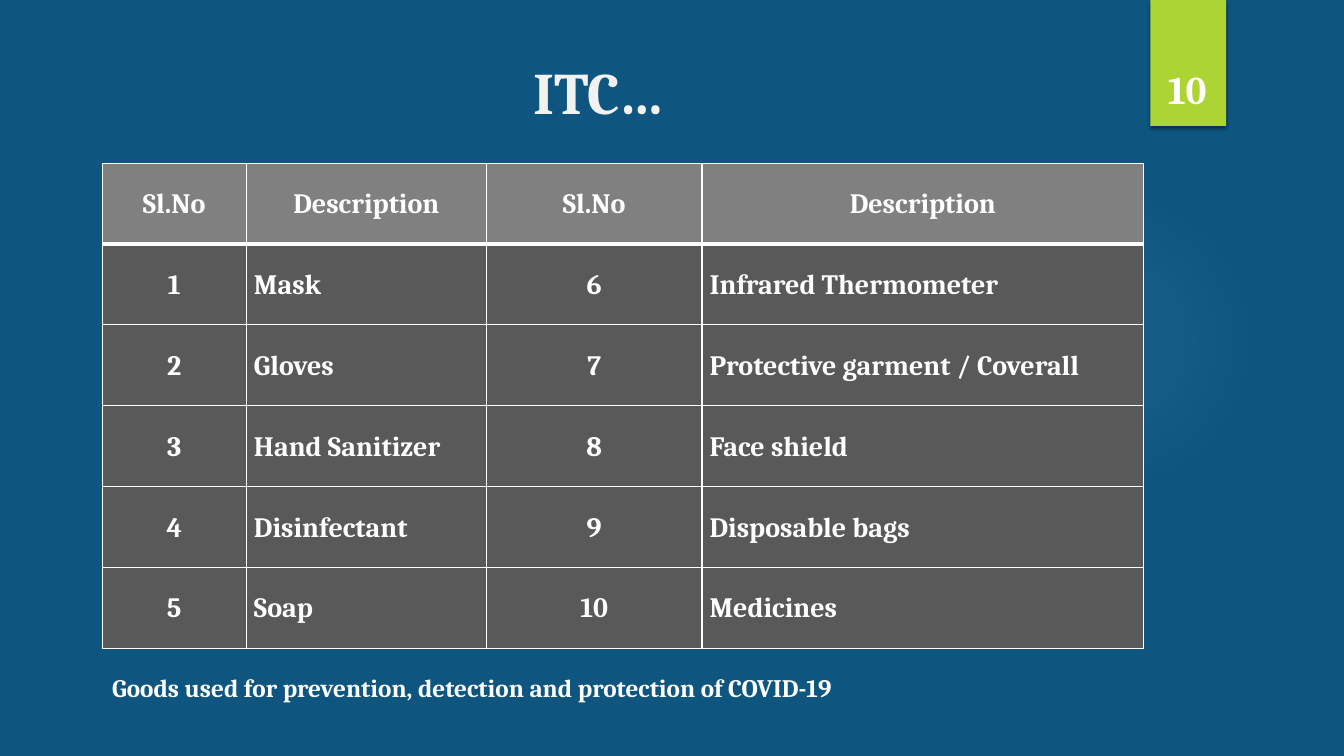
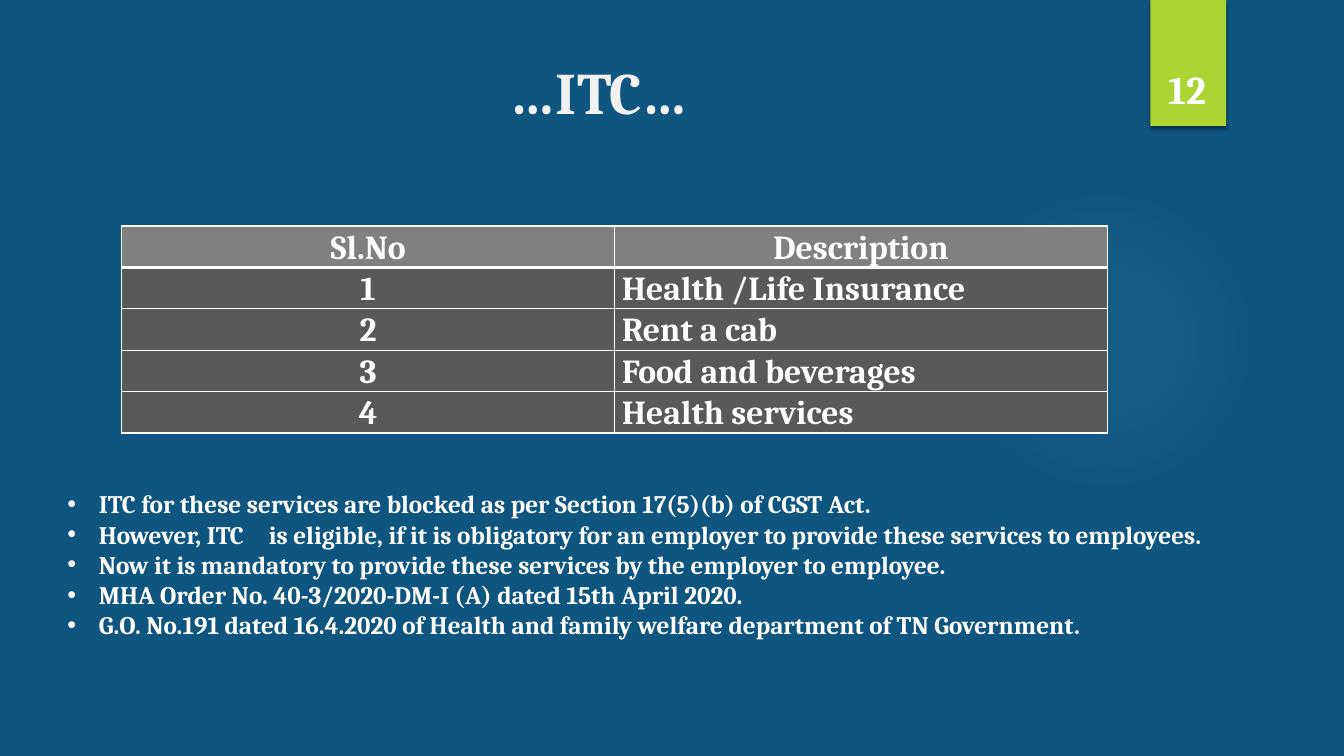
"""Build two input tax credit slides, each with a table and notes."""
from pptx import Presentation
from pptx.dml.color import RGBColor
from pptx.enum.shapes import MSO_SHAPE
from pptx.enum.text import MSO_ANCHOR, MSO_AUTO_SIZE, PP_ALIGN
from pptx.oxml import parse_xml
from pptx.oxml.ns import nsdecls, qn
from pptx.util import Pt

OVAL, RECTANGLE = MSO_SHAPE.OVAL, MSO_SHAPE.RECTANGLE
TOP, MIDDLE, BOTTOM = MSO_ANCHOR.TOP, MSO_ANCHOR.MIDDLE, MSO_ANCHOR.BOTTOM
LEFT, CENTER, JUSTIFY = PP_ALIGN.LEFT, PP_ALIGN.CENTER, PP_ALIGN.JUSTIFY

BLUE = RGBColor(0x0E, 0x55, 0x80)
SKY = RGBColor(0x7A, 0xC4, 0xF0)
LIME = RGBColor(0xAC, 0xD4, 0x33)
WHITE = RGBColor(0xFF, 0xFF, 0xFF)
PALE = RGBColor(0xF2, 0xF2, 0xF2)
HEADER_GREY = RGBColor(0x80, 0x80, 0x80)
BODY_GREY = RGBColor(0x59, 0x59, 0x59)

FONT = {"name": "Cambria", "bold": True}
CELL = {"margin_left": Pt(5.4), "margin_right": Pt(5.4), "margin_top": 0,
        "margin_bottom": 0, "vertical_anchor": MIDDLE}
GLOW_STOPS = [(0, 7), (36, 6), (69, 0)]

SLIDES = [
    {
        "title": "ITC…",
        "number": "10",
        "table_at": (73, 116.5),
        "columns": [103, 171.5, 154, 315.5],
        "row_height": 57.75,
        "size": 20,
        "rows": [
            ["Sl.No", "Description", "Sl.No", "Description"],
            ["1", "Mask", "6", "Infrared Thermometer"],
            ["2", "Gloves", "7", "Protective garment / Coverall"],
            ["3", "Hand Sanitizer", "8", "Face shield"],
            ["4", "Disinfectant", "9", "Disposable bags"],
            ["5", "Soap", "10", "Medicines"],
        ],
        "notes_at": (73, 476.5, 749, 29),
        "bulleted": False,
        "notes": ["Goods used for prevention, detection and protection of COVID-19"],
    },
    {
        "title": "…ITC…",
        "number": "12",
        "table_at": (87, 161.5),
        "columns": [352, 352],
        "row_height": 29.5,
        "size": 24,
        "rows": [
            ["Sl.No", "Description"],
            ["1", "Health /Life Insurance"],
            ["2", "Rent a cab"],
            ["3", "Food and beverages"],
            ["4", "Health services"],
        ],
        "notes_at": (41, 345.5, 850, 117),
        "bulleted": True,
        "notes": [
            "ITC for these services are blocked as per Section 17(5)(b) of CGST Act.",
            "However, ITC \tis eligible, if it is obligatory for an employer to provide these services to employees.",
            "Now it is mandatory to provide these services by the employer to employee.",
            "MHA Order No. 40-3/2020-DM-I (A) dated 15th April 2020.",
            "G.O. No.191 dated 16.4.2020 of Health and family welfare department of TN Government.",
        ],
    },
]


def write(frame, lines, size, align, color=WHITE, spacing=None, bulleted=False):
    for index, line in enumerate(lines):
        para = frame.add_paragraph() if index else frame.paragraphs[0]
        para.alignment = align
        if spacing:
            para.line_spacing = spacing
        if bulleted:
            properties = para._p.get_or_add_pPr()
            properties.set("marL", str(Pt(22.5)))
            properties.set("indent", str(-Pt(22.5)))
            properties.append(parse_xml(f'<a:buFont {nsdecls("a")} typeface="Arial"/>'))
            properties.append(parse_xml(f'<a:buChar {nsdecls("a")} char="•"/>'))
        span = para.add_run()
        span.text = line
        for name, value in FONT.items():
            setattr(span.font, name, value)
        span.font.size = Pt(size)
        span.font.color.rgb = color


def place_text(page, at, anchor, lines, size, align, bulleted=False):
    box = page.shapes.add_textbox(*map(Pt, at))
    box.text_frame.word_wrap = True
    box.text_frame.vertical_anchor = anchor
    write(box.text_frame, lines, size, align, bulleted=bulleted)


deck = Presentation()
deck.slide_width, deck.slide_height = Pt(960), Pt(540)
background = deck.slide_master.background.fill
background.solid()
background.fore_color.rgb = BLUE

for content in SLIDES:
    page = deck.slides.add_slide(deck.slide_layouts[5])

    glow = page.shapes.add_shape(OVAL, Pt(677.5), Pt(132), Pt(222), Pt(222))
    glow.shadow.inherit = False
    glow.line.fill.background()
    glow.fill.background()
    stops = "".join(
        f'<a:gs pos="{position * 1000}"><a:srgbClr val="{SKY}">'
        f'<a:alpha val="{opacity * 1000}"/></a:srgbClr></a:gs>'
        for position, opacity in GLOW_STOPS)
    properties = glow._element.spPr
    properties.replace(properties.find(qn("a:noFill")), parse_xml(
        f'<a:gradFill {nsdecls("a")}><a:gsLst>{stops}</a:gsLst><a:path path="circle">'
        '<a:fillToRect l="50000" t="50000" r="50000" b="50000"/></a:path></a:gradFill>'))

    ribbon = page.shapes.add_shape(RECTANGLE, Pt(821.75), 0, Pt(54), Pt(90))
    ribbon.fill.solid()
    ribbon.fill.fore_color.rgb = LIME
    ribbon.line.fill.background()
    ribbon.shadow.inherit = False
    ribbon._element.spPr.find(qn("a:effectLst")).append(parse_xml(
        f'<a:outerShdw {nsdecls("a")} blurRad="{Pt(3)}" dist="{Pt(2)}" dir="5400000" '
        'rotWithShape="0"><a:srgbClr val="000000"><a:alpha val="45000"/></a:srgbClr></a:outerShdw>'))

    title = page.shapes.title
    title.left, title.top, title.width, title.height = map(Pt, (34, 36, 788, 110))
    title.text_frame.auto_size = MSO_AUTO_SIZE.NONE
    title.text_frame.vertical_anchor = TOP
    write(title.text_frame, [content["title"]], 42, CENTER, PALE)

    rows, columns = content["rows"], content["columns"]
    left, top = content["table_at"]
    table = page.shapes.add_table(
        len(rows), len(columns), Pt(left), Pt(top),
        Pt(sum(columns)), Pt(content["row_height"] * len(rows))).table
    table.horz_banding = False
    for column, width in zip(table.columns, columns):
        column.width = Pt(width)
    for row_index, row in enumerate(rows):
        table.rows[row_index].height = Pt(content["row_height"])
        edges = {"L": 1, "R": 1, "T": 3 if row_index == 1 else 1, "B": 1 if row_index else 3}
        for column_index, words in enumerate(row):
            cell = table.cell(row_index, column_index)
            for name, value in CELL.items():
                setattr(cell, name, value)
            for side, weight in edges.items():
                cell._tc.get_or_add_tcPr().append(parse_xml(
                    f'<a:ln{side} {nsdecls("a")} w="{Pt(weight)}"><a:solidFill>'
                    f'<a:srgbClr val="{WHITE}"/></a:solidFill></a:ln{side}>'))
            cell.fill.solid()
            cell.fill.fore_color.rgb = BODY_GREY if row_index else HEADER_GREY
            align = JUSTIFY if row_index and column_index % 2 else CENTER
            write(cell.text_frame, [words], content["size"], align, spacing=1.07)

    place_text(page, (815, 23, 66, 60.5), BOTTOM, [content["number"]], 28, CENTER)
    place_text(page, content["notes_at"], TOP, content["notes"], 18, LEFT, content["bulleted"])

deck.save("out.pptx")
